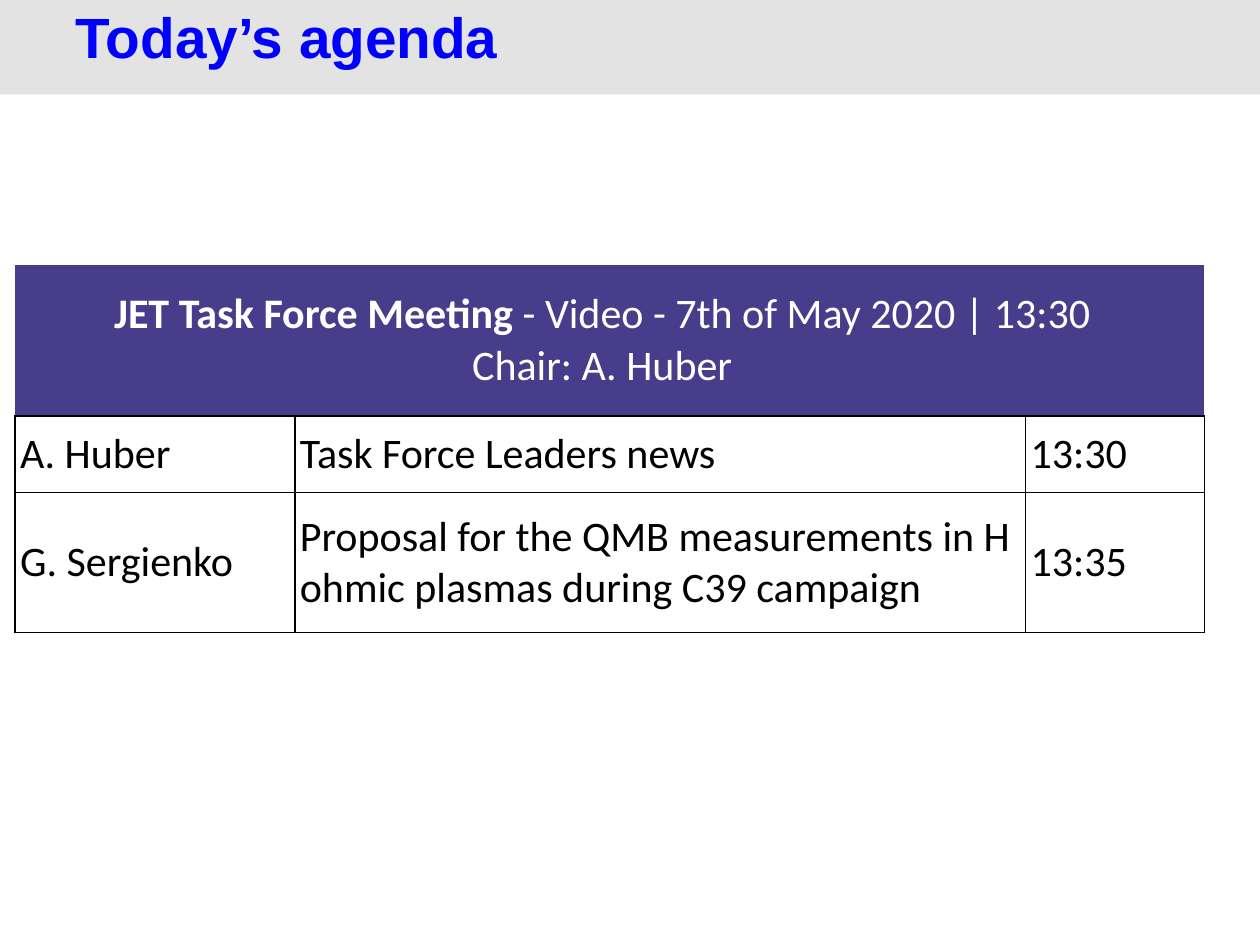
import dataclasses
import lxml.etree
import pptx
import pptx.dml.color
import pptx.enum.shapes
import pptx.enum.text
import pptx.oxml.ns
import pptx.util

Inches = pptx.util.Inches
Pt = pptx.util.Pt
Align = pptx.enum.text.PP_ALIGN
Anchor = pptx.enum.text.MSO_ANCHOR
qn = pptx.oxml.ns.qn


@dataclasses.dataclass(frozen=True)
class Theme:
    band: str = "E3E3E3"
    title: str = "0000FF"
    head: str = "483D8B"
    light: str = "FFFFFF"
    dark: str = "000000"
    big: float = 32.4
    body: float = 24
    lead: float = 32
    line: float = 1
    sans: str = "Arial"
    text: str = "Calibri"


def color(value):
    return pptx.dml.color.RGBColor.from_string(value)


class Deck:
    def __init__(self, theme):
        self.theme = theme
        self.file = pptx.Presentation()
        self.file.slide_width = Inches(10)
        self.file.slide_height = Inches(7.5)
        self.slide = self.file.slides.add_slide(self.file.slide_layouts[5])

    def style(self, part, face, size, tone, bold=False):
        for run in part.runs:
            run.font.name = face
            run.font.size = Pt(size)
            run.font.color.rgb = color(tone)
            run.font.bold = bold

    def title(self, text, left, top, width, height):
        box = self.slide.shapes.title
        box.left, box.top = Inches(left), Inches(top)
        box.width, box.height = Inches(width), Inches(height)
        frame = box.text_frame
        frame.text = text
        frame.word_wrap = True
        frame.auto_size = pptx.enum.text.MSO_AUTO_SIZE.NONE
        frame.vertical_anchor = Anchor.MIDDLE
        part = frame.paragraphs[0]
        part.alignment = Align.LEFT
        part.line_spacing = Pt(self.theme.lead)
        self.style(part, self.theme.sans, self.theme.big, self.theme.title, True)

    def band(self, left, top, width, height):
        bar = self.slide.shapes.add_shape(
            pptx.enum.shapes.MSO_SHAPE.RECTANGLE,
            Inches(left), Inches(top), Inches(width), Inches(height))
        bar.shadow.inherit = False
        bar.fill.solid()
        bar.fill.fore_color.rgb = color(self.theme.band)
        bar.line.fill.background()
        self.slide.shapes.title.element.addprevious(bar.element)

    def border(self, cell, sides):
        props = cell._tc.get_or_add_tcPr()
        for spot, side in enumerate("LRTB"):
            line = lxml.etree.Element(qn(f"a:ln{side}"), w=str(Pt(self.theme.line)))
            if side in sides:
                fill = lxml.etree.SubElement(line, qn("a:solidFill"))
                lxml.etree.SubElement(fill, qn("a:srgbClr"), val=self.theme.dark)
            else:
                lxml.etree.SubElement(line, qn("a:noFill"))
            props.insert(spot, line)

    def cell(self, cell, text, fill, tone, sides):
        cell.text_frame.text = text
        cell.vertical_anchor = Anchor.MIDDLE
        cell.margin_left = cell.margin_right = Inches(0.04)
        cell.margin_top = cell.margin_bottom = Inches(0.04)
        cell.fill.solid()
        cell.fill.fore_color.rgb = color(fill)
        self.border(cell, sides)
        for part in cell.text_frame.paragraphs:
            self.style(part, self.theme.text, self.theme.body, tone)

    def table(self, left, top, cols, rows, head, items):
        grid = self.slide.shapes.add_table(
            len(rows), len(cols), Inches(left), Inches(top),
            Inches(sum(cols)), Inches(sum(rows))).table
        grid.first_row = grid.horz_banding = False
        for col, width in zip(grid.columns, cols):
            col.width = Inches(width)
        for row, height in zip(grid.rows, rows):
            row.height = Inches(height)
        self.head(grid, *head)
        for y, item in enumerate(items, 1):
            for x, text in enumerate(item):
                self.cell(grid.cell(y, x), text, self.theme.light,
                          self.theme.dark, "LRTB")

    def head(self, grid, name, when, chair):
        top = grid.cell(0, 0)
        top.merge(grid.cell(0, len(grid.columns) - 1))
        self.cell(top, f"\n{chair}", self.theme.head, self.theme.light, "B")
        top.margin_right = Inches(0.16)
        first = top.text_frame.paragraphs[0]
        for text in (name, when):
            first.add_run().text = text
        self.style(first, self.theme.text, self.theme.body, self.theme.light)
        first.runs[0].font.bold = True
        for part in top.text_frame.paragraphs:
            part.alignment = Align.CENTER


def main():
    deck = Deck(Theme())
    deck.band(0, 0, 10, 0.75)
    deck.title("Today’s agenda", 0.5, 0.08, 8.25, 0.5)
    deck.table(
        0.12, 2.1, (2.22, 5.8, 1.42), (1.2, 0.61, 1.11),
        ("JET Task Force Meeting", " - Video - 7th of May 2020 | 13:30",
         "Chair: A. Huber"),
        (("A. Huber", "Task Force Leaders news", "13:30"),
         ("G. Sergienko",
          "Proposal for the QMB measurements in H ohmic plasmas during C39 campaign",
          "13:35")))
    deck.file.save("out.pptx")


if __name__ == "__main__":
    main()
